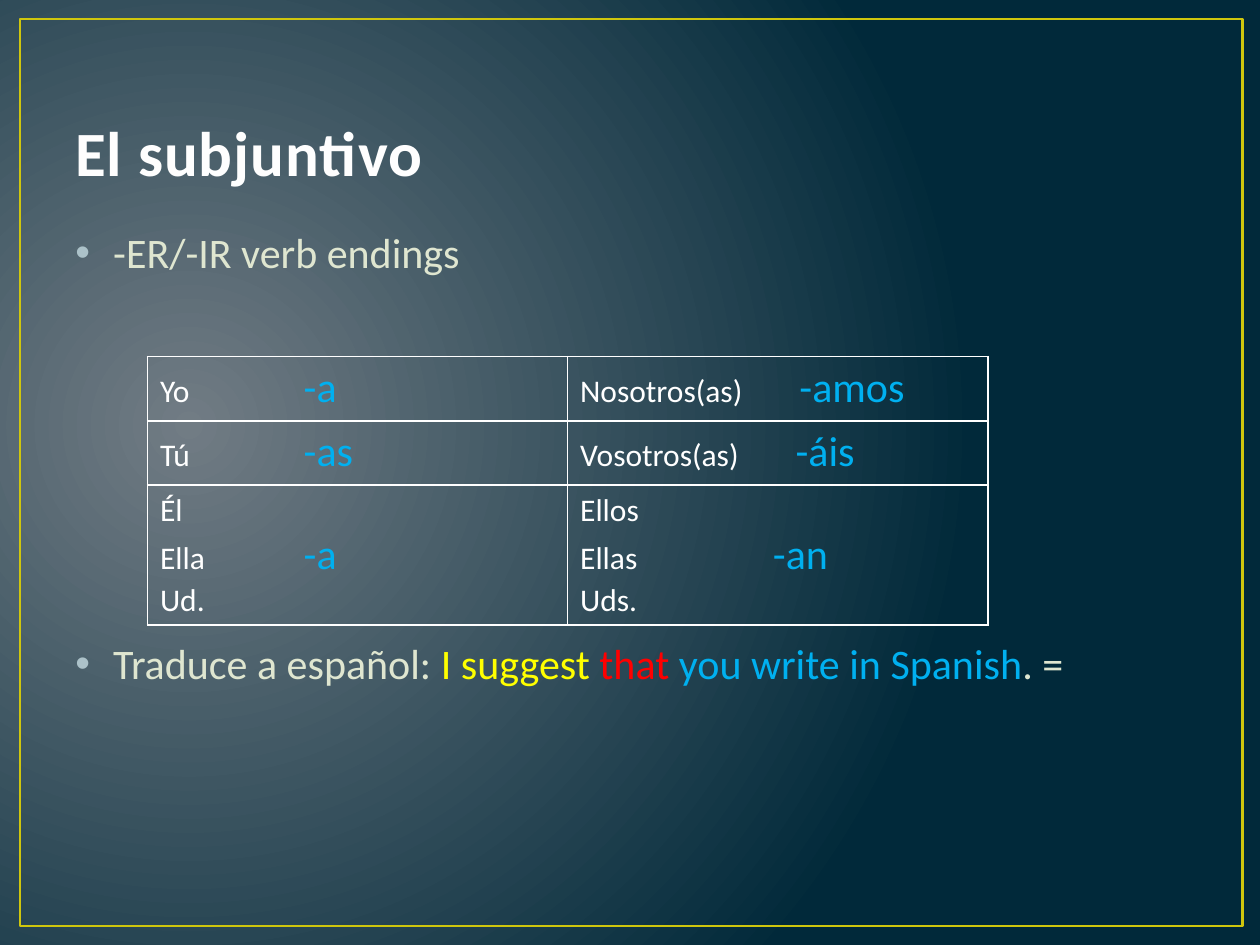
from lxml import etree
from pptx import Presentation
from pptx.dml.color import RGBColor
from pptx.enum.shapes import MSO_SHAPE
from pptx.enum.text import MSO_ANCHOR
from pptx.oxml.ns import qn
from pptx.util import Inches, Pt

RECT = MSO_SHAPE.RECTANGLE
BOTTOM = MSO_ANCHOR.BOTTOM
FONT = "Calibri"
COLORS = {
    "glow": "717C84", "night": "01293A", "frame": "CFC60D", "title": "FEFEFE",
    "body": "DFE6D0", "bullet": "ACC2C9", "white": "FFFFFF",
    "yellow": "FFFF00", "red": "FF0000", "blue": "00B0F0",
}
# Each cell: its lines, and the tab position of the verb ending in inches
ENDINGS = [
    [(["Yo\t-a"], 1.14), (["Nosotros(as)\t-amos"], 1.74)],
    [(["Tú\t-as"], 1.14), (["Vosotros(as)\t-áis"], 1.71)],
    [(["Él", "Ella\t-a", "Ud."], 1.14), (["Ellos", "Ellas\t-an", "Uds."], 1.53)],
]
ROW_HEIGHTS = [0.51, 0.51, 1.11]


def rgb(name):
    return RGBColor.from_string(COLORS[name])


def add_run(p, text, size=24, color="body", bold=False, spacing=None):
    r = p.add_run()
    r.text = text
    r.font.name, r.font.size, r.font.bold = FONT, Pt(size), bold
    r.font.color.rgb = rgb(color)
    if spacing:
        r.font._element.set("spc", str(int(spacing * 100)))


def add_text_frame(slide, left, top, width, height):
    tf = slide.shapes.add_textbox(
        Inches(left), Inches(top), Inches(width), Inches(height)).text_frame
    tf.word_wrap = True
    return tf


def set_background(slide):
    """Radial gradient that glows from the left edge."""
    fill = slide.background.fill
    fill.gradient()
    for stop, name, position in zip(fill.gradient_stops, ("glow", "night"), (0, 1)):
        stop.color.rgb = rgb(name)
        stop.position = position
    grad = slide.element.find(".//" + qn("a:gradFill"))
    grad.remove(grad.find(qn("a:lin")))
    circle = etree.SubElement(grad, qn("a:path"), path="circle")
    etree.SubElement(circle, qn("a:fillToRect"),
                     l="15000", t="50000", r="85000", b="60000")


def add_frame(slide):
    sp = slide.shapes.add_shape(RECT, Inches(0.16), Inches(0.15), Inches(9.7), Inches(7.2))
    sp.shadow.inherit = False
    sp.fill.background()
    sp.line.color.rgb = rgb("frame")
    sp.line.width = Pt(1.5)


def set_bullet(p):
    pPr = p._p.get_or_add_pPr()
    pPr.set("marL", str(Inches(0.3)))
    pPr.set("indent", str(-Inches(0.3)))
    color = etree.SubElement(pPr, qn("a:buClr"))
    etree.SubElement(color, qn("a:srgbClr"), val=COLORS["bullet"])
    etree.SubElement(pPr, qn("a:buFont"), typeface="Arial")
    etree.SubElement(pPr, qn("a:buChar"), char="•")


def set_tab(p, inches):
    tabs = etree.SubElement(p._p.get_or_add_pPr(), qn("a:tabLst"))
    etree.SubElement(tabs, qn("a:tab"), pos=str(Inches(inches)), algn="l")


def set_borders(cell):
    tcPr = cell._tc.get_or_add_tcPr()
    for i, side in enumerate(("lnL", "lnR", "lnT", "lnB")):
        ln = etree.Element(qn("a:" + side), w=str(Pt(1)))
        fill = etree.SubElement(ln, qn("a:solidFill"))
        etree.SubElement(fill, qn("a:srgbClr"), val=COLORS["white"])
        tcPr.insert(i, ln)


def fill_cell(cell, lines, tab):
    cell.fill.background()
    set_borders(cell)
    tf = cell.text_frame
    for i, line in enumerate(lines):
        p = tf.paragraphs[0] if i == 0 else tf.add_paragraph()
        pronoun, gap, ending = line.partition("\t")
        add_run(p, pronoun + gap, size=18, color="white")
        if ending:
            set_tab(p, tab)
            add_run(p, ending, color="blue")


def add_endings_table(slide):
    table = slide.shapes.add_table(
        len(ENDINGS), 2, Inches(1.17), Inches(2.83),
        Inches(6.67), Inches(sum(ROW_HEIGHTS))).table
    table.first_row = table.horz_banding = False
    for i, (row, height) in enumerate(zip(ENDINGS, ROW_HEIGHTS)):
        table.rows[i].height = Inches(height)
        for j, (lines, tab) in enumerate(row):
            fill_cell(table.cell(i, j), lines, tab)


def add_title(slide):
    tf = add_text_frame(slide, 0.5, 0.3, 9, 1.25)
    tf.vertical_anchor = BOTTOM
    add_run(tf.paragraphs[0], "El subjuntivo", size=36, color="title",
            bold=True, spacing=0.5)


def add_body(slide):
    tf = add_text_frame(slide, 0.5, 1.75, 9, 4.95)
    heading, task = tf.paragraphs[0], tf.add_paragraph()
    task.space_before = Pt(206)  # leaves room for the table
    for p in (heading, task):
        set_bullet(p)
    add_run(heading, "-ER/-IR verb endings")
    for text, color in [("Traduce a español: ", "body"), ("I suggest ", "yellow"),
                        ("that ", "red"), ("you write in Spanish", "blue"),
                        (". =", "body")]:
        add_run(task, text, color=color)


def main():
    prs = Presentation()
    prs.slide_width, prs.slide_height = Inches(10), Inches(7.5)
    slide = prs.slides.add_slide(prs.slide_layouts[6])
    set_background(slide)
    add_frame(slide)
    add_title(slide)
    add_body(slide)
    add_endings_table(slide)
    prs.save("out.pptx")


if __name__ == "__main__":
    main()
